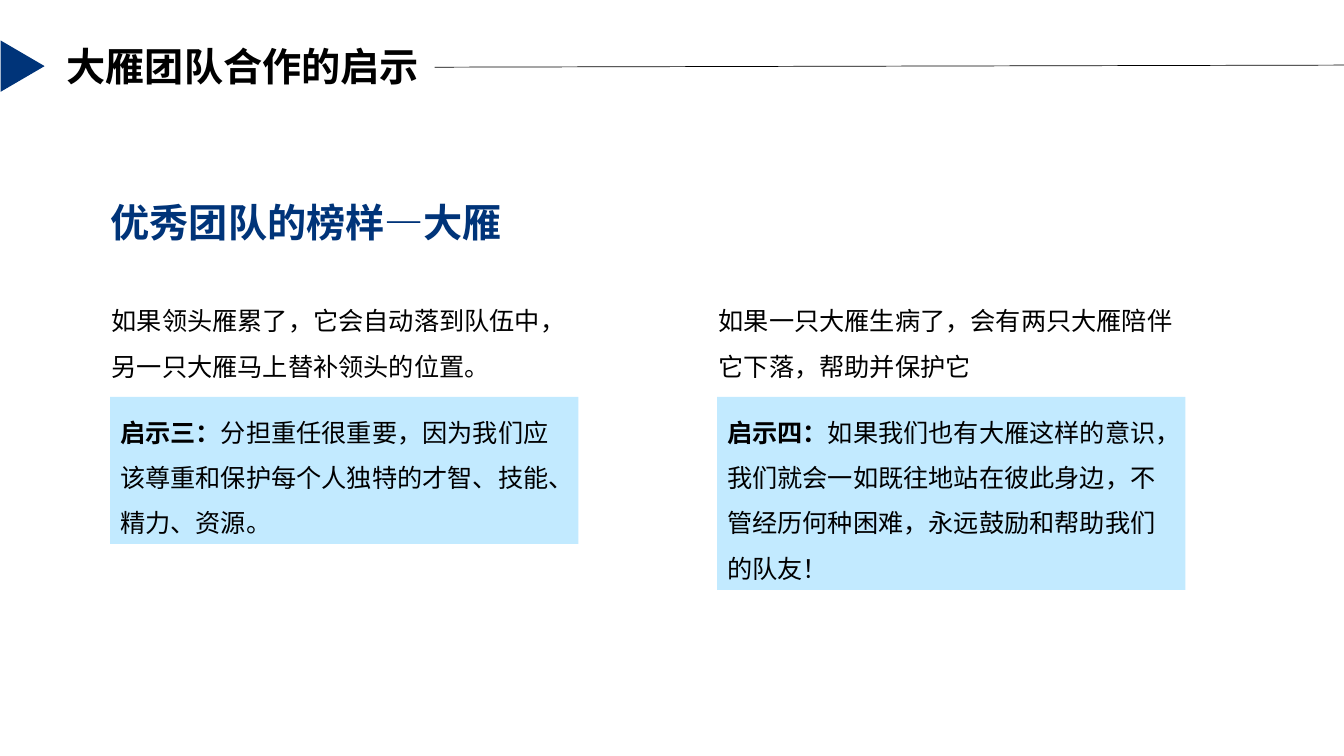
from lxml.etree import SubElement
from pptx import Presentation
from pptx.dml.color import RGBColor
from pptx.enum.shapes import MSO_CONNECTOR, MSO_SHAPE
from pptx.enum.text import MSO_ANCHOR, MSO_AUTO_SIZE, PP_ALIGN
from pptx.oxml.ns import qn
from pptx.util import Emu, Pt

PX = 9525
NAVY = RGBColor(0x00, 0x34, 0x79)
SKY = RGBColor(0xC2, 0xEA, 0xFF)
BLACK = RGBColor(0x00, 0x00, 0x00)
TITLE_FONT = "Noto Sans CJK JP"
BODY_FONT = "Noto Sans CJK SC"

COLUMN_LEFT = 97
COLUMN_PITCH = 578
LESSONS = [
    ("如果领头雁累了，它会自动落到队伍中，另一只大雁马上替补领头的位置。",
     "启示三：",
     "分担重任很重要，因为我们应该尊重和保护每个人独特的才智、技能、精力、资源。",
     140),
    ("如果一只大雁生病了，会有两只大雁陪伴它下落，帮助并保护它",
     "启示四：",
     "如果我们也有大雁这样的意识，我们就会一如既往地站在彼此身边，不管经历何种困难，永远鼓励和帮助我们的队友！",
     184),
]


def px(*lengths):
    return [Emu(length * PX) for length in lengths]


def write_text(shape, runs, size, color=BLACK, font=BODY_FONT, spacing=1.0,
               align=PP_ALIGN.LEFT, anchor=MSO_ANCHOR.TOP,
               auto_size=MSO_AUTO_SIZE.SHAPE_TO_FIT_TEXT):
    frame = shape.text_frame
    frame.word_wrap = True
    frame.auto_size = auto_size
    frame.vertical_anchor = anchor
    paragraph = frame.paragraphs[0]
    paragraph.alignment = align
    paragraph.line_spacing = spacing
    for text, bold in runs:
        run = paragraph.add_run()
        run.text = text
        run.font.size = Pt(size)
        run.font.bold = bold
        run.font.color.rgb = color
        run.font.name = font
        east_asian = SubElement(run.font._element, qn("a:ea"))
        east_asian.set("typeface", font)


def add_text(slide, box, runs, size, **style):
    shape = slide.shapes.add_textbox(*px(*box))
    write_text(shape, runs, size, **style)


def add_filled_shape(slide, kind, box, color):
    shape = slide.shapes.add_shape(kind, *px(*box))
    shape.shadow.inherit = False
    shape.fill.solid()
    shape.fill.fore_color.rgb = color
    shape.line.fill.background()
    return shape


def add_rule(slide, start, end):
    rule = slide.shapes.add_connector(MSO_CONNECTOR.STRAIGHT, *px(*start, *end))
    rule.line.color.rgb = BLACK
    rule.line.width = Pt(0.5)
    SubElement(rule._element.spPr, qn("a:effectLst"))


def add_header(slide):
    add_text(slide, (54, 36, 360, 55), [("大雁团队合作的启示", True)], 28,
             font=TITLE_FONT, align=PP_ALIGN.JUSTIFY)
    marker = add_filled_shape(slide, MSO_SHAPE.ISOSCELES_TRIANGLE,
                              (-3, 42, 49, 42), NAVY)
    marker.rotation = 90
    add_rule(slide, (414, 64), (1280, 62))


def add_lesson(slide, left, story, label, lesson, height):
    add_text(slide, (left, 272, 453, 92), [(story, False)], 18, spacing=1.5)
    panel = add_filled_shape(slide, MSO_SHAPE.RECTANGLE,
                             (left + 8, 378, 446, height), SKY)
    write_text(panel, [(label, True), (lesson, False)], 18, spacing=1.5)


def main():
    presentation = Presentation()
    presentation.slide_width, presentation.slide_height = px(1280, 720)
    slide = presentation.slides.add_slide(presentation.slide_layouts[6])
    add_header(slide)
    for index, lesson in enumerate(LESSONS):
        add_lesson(slide, COLUMN_LEFT + index * COLUMN_PITCH, *lesson)
    add_text(slide, (96, 151, 816, 127), [("优秀团队的榜样—大雁", True)], 28,
             color=NAVY, spacing=0.9, anchor=MSO_ANCHOR.MIDDLE,
             auto_size=MSO_AUTO_SIZE.NONE)
    presentation.save("out.pptx")


if __name__ == "__main__":
    main()
